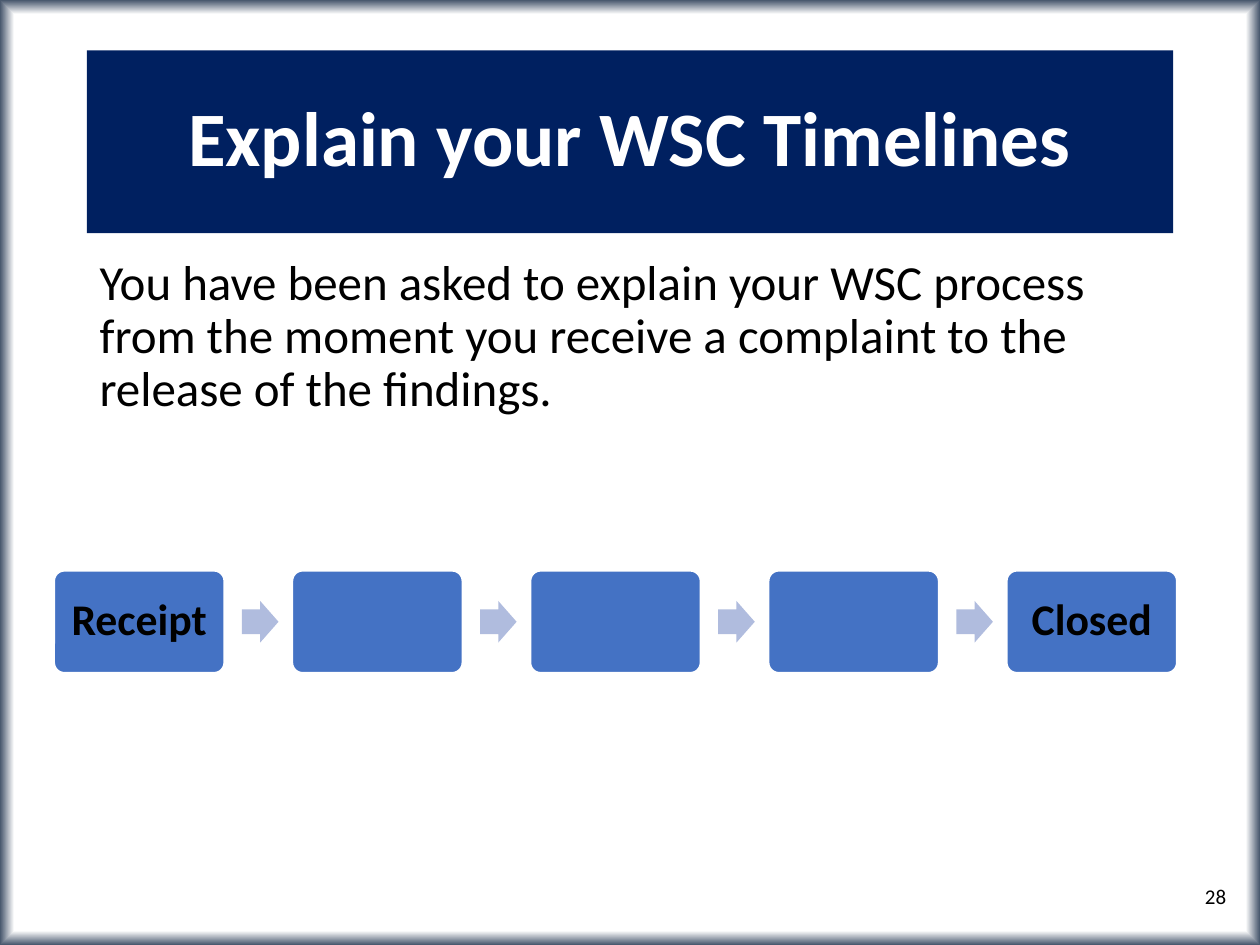
from dataclasses import dataclass

from lxml import etree
from pptx import Presentation
from pptx import util as u
from pptx.dml.color import RGBColor
from pptx.enum import shapes, text
from pptx.oxml import ns


@dataclass(frozen=True)
class Theme:
    font: str = "Calibri"
    navy: str = "002060"
    blue: str = "4472C4"
    pale_blue: str = "B0BCDE"
    slate: str = "44546A"
    white: str = "FFFFFF"
    black: str = "000000"
    title_size: int = 44
    body_size: int = 28
    step_size: int = 25
    number_size: int = 12


THEME = Theme()
STEPS = ["Receipt", "", "", "", "Closed"]


def place(shape, box):
    shape.left, shape.top, shape.width, shape.height = map(u.Inches, box)


def paint(shape, color):
    shape.fill.solid()
    shape.fill.fore_color.rgb = RGBColor.from_string(color)


def write(shape, content, size, color, align, bold=False, spacing=0.9):
    frame = shape.text_frame
    frame.text = content
    frame.word_wrap = True
    frame.auto_size = text.MSO_AUTO_SIZE.NONE
    paragraph = frame.paragraphs[0]
    paragraph.alignment = align
    paragraph.line_spacing = spacing
    paragraph.space_before = u.Pt(0)
    for run in paragraph.runs:
        run.font.name = THEME.font
        run.font.size = u.Pt(size)
        run.font.bold = bold
        run.font.color.rgb = RGBColor.from_string(color)


def add_background(slide):
    fill = slide.background.fill
    fill.gradient()
    for stop, position, color in zip(fill.gradient_stops, (0.97, 1), (THEME.white, THEME.slate)):
        stop.position = position
        stop.color.rgb = RGBColor.from_string(color)
    gradient = slide.element.find(".//" + ns.qn("a:gradFill"))
    direction = gradient.find(ns.qn("a:lin"))
    if direction is not None:
        gradient.remove(direction)
    outline = etree.Element(ns.qn("a:path"), {"path": "shape"})
    etree.SubElement(outline, ns.qn("a:fillToRect"), dict.fromkeys("ltrb", "50000"))
    gradient.find(ns.qn("a:gsLst")).addnext(outline)


def add_title(slide, box):
    title = slide.shapes.title
    place(title, box)
    paint(title, THEME.navy)
    write(title, "Explain your WSC Timelines", THEME.title_size, THEME.white,
          text.PP_ALIGN.CENTER, bold=True)
    title.text_frame.vertical_anchor = text.MSO_ANCHOR.MIDDLE


def add_body(slide, box):
    body = slide.placeholders[1]
    place(body, box)
    write(body, "You have been asked to explain your WSC process from the moment "
          "you receive a complaint to the release of the findings.",
          THEME.body_size, THEME.black, text.PP_ALIGN.LEFT)
    properties = body.text_frame.paragraphs[0]._p.get_or_add_pPr()
    properties.set("marL", "0")
    properties.set("indent", "0")
    etree.SubElement(properties, ns.qn("a:buNone"))


def add_block(group, kind, box, color, adjustments):
    block = group.shapes.add_shape(kind, *map(u.Inches, box))
    block.shadow.inherit = False
    paint(block, color)
    block.line.fill.background()
    for index, value in enumerate(adjustments):
        block.adjustments[index] = value
    return block


def add_step(group, label, box):
    step = add_block(group, shapes.MSO_SHAPE.ROUNDED_RECTANGLE, box, THEME.blue, [0.1])
    step.line.color.rgb = RGBColor.from_string(THEME.white)
    step.line.width = u.Pt(1)
    if label:
        write(step, label, THEME.step_size, THEME.black, text.PP_ALIGN.CENTER, bold=True)
        frame = step.text_frame
        frame.vertical_anchor = text.MSO_ANCHOR.MIDDLE
        frame.margin_left = frame.margin_right = u.Inches(0.1)


def add_process(slide, box):
    left, top, width, height = box
    step_width, arrow_width, arrow_height = 1.35, 0.29, 0.33
    pitch = (width - step_width) / (len(STEPS) - 1)
    arrow_top = top + (height - arrow_height) / 2
    group = slide.shapes.add_group_shape()
    for index, label in enumerate(STEPS):
        step_left = left + index * pitch
        if index:
            add_block(group, shapes.MSO_SHAPE.RIGHT_ARROW,
                      (step_left - 0.4, arrow_top, arrow_width, arrow_height),
                      THEME.pale_blue, [0.6, 0.5])
        add_step(group, label, (step_left, top, step_width, height))


def add_slide_number(slide, box):
    number = slide.shapes.add_textbox(*map(u.Inches, box))
    write(number, "28", THEME.number_size, THEME.black, text.PP_ALIGN.RIGHT, spacing=1.0)


def main():
    presentation = Presentation()
    presentation.slide_width = u.Inches(10)
    presentation.slide_height = u.Inches(7.5)
    slide = presentation.slides.add_slide(presentation.slide_layouts[1])
    add_background(slide)
    add_title(slide, (0.69, 0.4, 8.62, 1.45))
    add_body(slide, (0.69, 2, 8.62, 4.76))
    add_process(slide, (0.43, 4.53, 8.91, 0.81))
    add_slide_number(slide, (7.58, 6.96, 2.25, 0.4))
    presentation.save("out.pptx")


if __name__ == "__main__":
    main()
